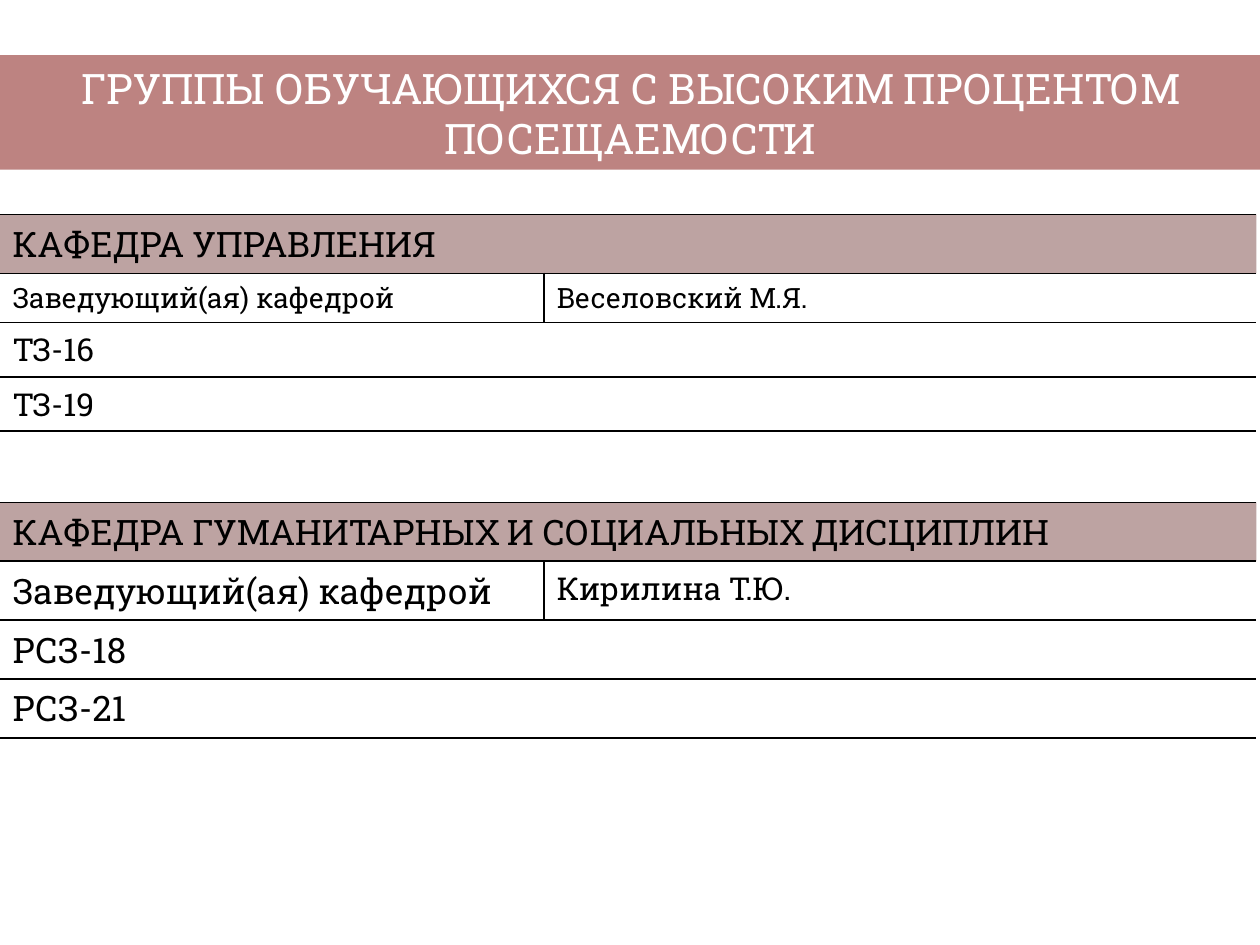
from lxml.etree import SubElement
from pptx import Presentation
from pptx.dml.color import RGBColor
from pptx.enum.text import MSO_ANCHOR, MSO_AUTO_SIZE, PP_ALIGN
from pptx.oxml.ns import qn
from pptx.util import Pt

FONT = "Roboto Slab"
WHITE = RGBColor(0xFF, 0xFF, 0xFF)
BLACK = RGBColor(0, 0, 0)
BANNER_RED = RGBColor(0x95, 0x37, 0x35)
HEADER_RED = RGBColor(0x63, 0x25, 0x23)
PLAIN_STYLE = "{2D5ABB26-0587-4C30-8999-92F81FD0307C}"
COLUMN_WIDTHS = (311, 407)
HEAD_LABEL = "Заведующий(ая) кафедрой"


def write_text(frame, text, size=20, color=BLACK, align=PP_ALIGN.LEFT):
    """Put one formatted paragraph into a text frame."""
    para = frame.paragraphs[0]
    para.alignment = align
    span = para.add_run()
    span.text = text
    span.font.name = FONT
    span.font.size = Pt(size)
    span.font.color.rgb = color


def fill_translucent(fill, properties, color, percent):
    """Apply a solid fill with the given opacity in percent."""
    fill.solid()
    fill.fore_color.rgb = color
    color_node = properties.find(qn("a:solidFill"))[0]
    SubElement(color_node, qn("a:alpha"), val=str(percent * 1000))


def draw_borders(cell, sides):
    """Draw one-point black borders on the named sides, in schema order."""
    properties = cell._tc.get_or_add_tcPr()
    for side in sides:
        line = SubElement(properties, qn(f"a:ln{side}"), w=str(Pt(1)))
        solid = SubElement(line, qn("a:solidFill"))
        SubElement(solid, qn("a:srgbClr"), val=str(BLACK))


def add_title(page, text):
    """Turn the title placeholder into the full-width banner."""
    title = page.shapes.title
    title.left, title.top, title.width, title.height = Pt(0), Pt(31.5), Pt(720.5), Pt(65.5)
    fill_translucent(title.fill, title._element.spPr, BANNER_RED, 62)
    frame = title.text_frame
    frame.word_wrap = True
    frame.auto_size = MSO_AUTO_SIZE.NONE
    frame.vertical_anchor = MSO_ANCHOR.MIDDLE
    write_text(frame, text, size=24, color=WHITE, align=PP_ALIGN.CENTER)


def add_department(page, top, heights, rows):
    """Add a department table; rows with a single entry span both columns."""
    frame = page.shapes.add_table(
        len(rows), len(COLUMN_WIDTHS), Pt(0), Pt(top), Pt(sum(COLUMN_WIDTHS)), Pt(sum(heights))
    )
    table = frame.table
    table.first_row = table.horz_banding = False
    table._tbl.tblPr.find(qn("a:tableStyleId")).text = PLAIN_STYLE
    for column, width in zip(table.columns, COLUMN_WIDTHS):
        column.width = Pt(width)
    for index, (entries, height) in enumerate(zip(rows, heights)):
        table.rows[index].height = Pt(height)
        left, right = table.cell(index, 0), table.cell(index, 1)
        divided = len(entries) > 1
        draw_borders(left, "RTB" if divided else "TB")
        draw_borders(right, "LTB" if divided else "TB")
        if not divided:
            left.merge(right)
        for cell, (text, size) in zip((left, right), entries):
            write_text(cell.text_frame, text, size=size)
            if index == 0:
                fill_translucent(cell.fill, cell._tc.tcPr, HEADER_RED, 42)


def main():
    """Build the attendance slide."""
    deck = Presentation()
    deck.slide_width, deck.slide_height = Pt(720), Pt(540)
    page = deck.slides.add_slide(deck.slide_layouts[5])
    add_title(page, "ГРУППЫ ОБУЧАЮЩИХСЯ С ВЫСОКИМ ПРОЦЕНТОМ ПОСЕЩАЕМОСТИ")
    add_department(page, 122.5, (31, 26.5, 30.25, 30.25), [
        [("КАФЕДРА УПРАВЛЕНИЯ", 20)],
        [(HEAD_LABEL, 16), ("Веселовский М.Я.", 16)],
        [("ТЗ-16", 18)],
        [("ТЗ-19", 18)],
    ])
    add_department(page, 287, (31.25,) * 4, [
        [("КАФЕДРА ГУМАНИТАРНЫХ И СОЦИАЛЬНЫХ ДИСЦИПЛИН", 20)],
        [(HEAD_LABEL, 20), ("Кирилина Т.Ю.", 18)],
        [("РСЗ-18", 20)],
        [("РСЗ-21", 20)],
    ])
    deck.save("out.pptx")


if __name__ == "__main__":
    main()
